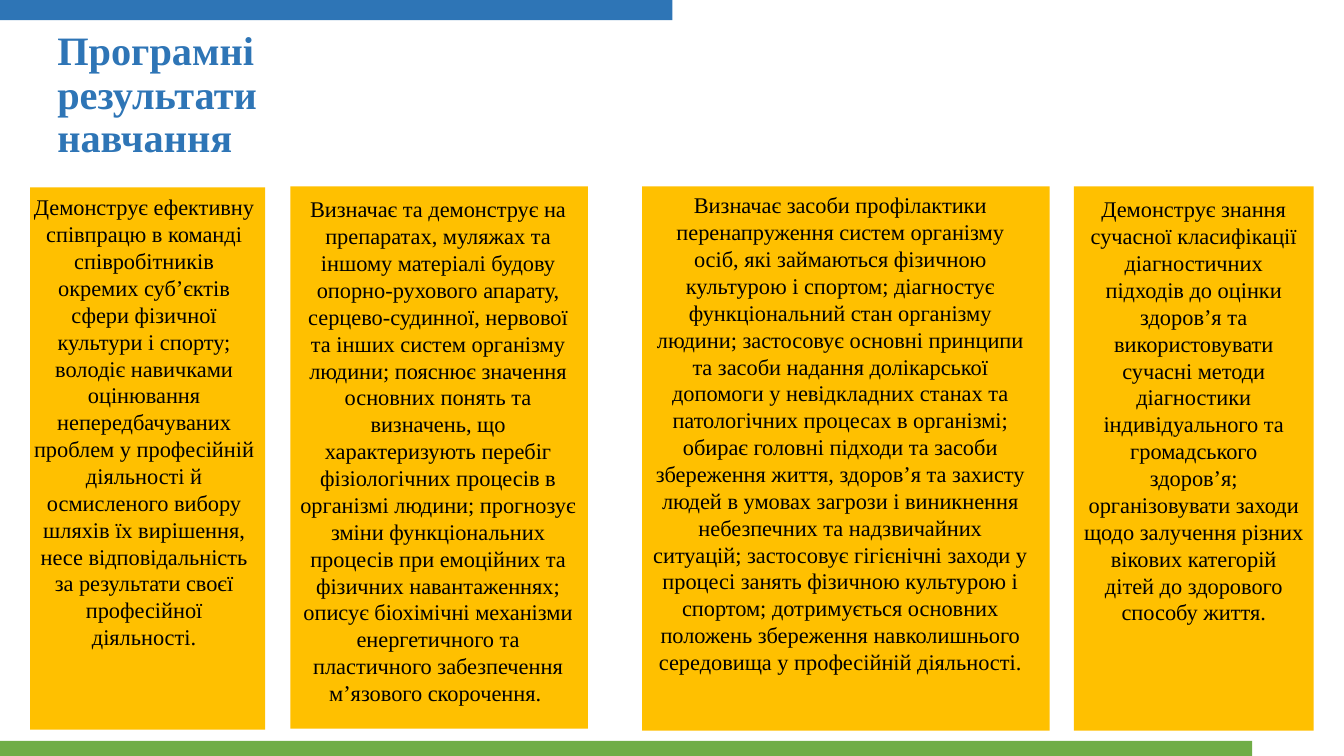
from dataclasses import dataclass

from pptx import Presentation
from pptx.dml.color import RGBColor
from pptx.enum.shapes import MSO_SHAPE
from pptx.enum.text import MSO_ANCHOR, MSO_AUTO_SIZE, PP_ALIGN
from pptx.slide import Slide
from pptx.text.text import TextFrame
from pptx.util import Inches, Pt

RECTANGLE = MSO_SHAPE.RECTANGLE
MIDDLE = MSO_ANCHOR.MIDDLE
GROW_TO_TEXT = MSO_AUTO_SIZE.SHAPE_TO_FIT_TEXT
CENTER = PP_ALIGN.CENTER
LEFT = PP_ALIGN.LEFT

FONT = "Times New Roman"
BLUE = "2E75B6"
GREEN = "70AD47"
AMBER = "FFC000"
BLACK = "000000"


@dataclass(frozen=True)
class Box:
    left: float
    top: float
    width: float
    height: float


@dataclass(frozen=True)
class Outcome:
    panel: Box
    text_area: Box
    text: str


TITLE = "Програмні \vрезультати \vнавчання"
TITLE_AREA = Box(0.47, 0.23, 6.2, 1.45)
BOTTOM_BAND = Box(-0.01, 7.35, 12.43, 0.18)
TOP_BAND = Box(-0.03, -0.03, 6.7, 0.23)

OUTCOMES = [
    Outcome(
        Box(0.3, 1.86, 2.33, 5.38),
        Box(0.23, 1.87, 2.4, 4.68),
        "Демонструє ефективну співпрацю в команді співробітників окремих "
        "суб’єктів сфери фізичної культури і спорту; володіє навичками "
        "оцінювання непередбачуваних проблем у професійній діяльності й "
        "осмисленого вибору шляхів їх вирішення, несе відповідальність за "
        "результати своєї професійної діяльності.",
    ),
    Outcome(
        Box(2.88, 1.85, 2.95, 5.38),
        Box(2.87, 1.89, 2.95, 5.22),
        "Визначає та демонструє на препаратах, муляжах та іншому матеріалі "
        "будову опорно-рухового апарату, серцево-судинної, нервової та інших "
        "систем організму людини; пояснює значення основних понять та "
        "визначень, що характеризують перебіг фізіологічних процесів в "
        "організмі людини; прогнозує зміни функціональних процесів при "
        "емоційних та фізичних навантаженнях; описує біохімічні механізми "
        "енергетичного та пластичного забезпечення м’язового скорочення. ",
    ),
    Outcome(
        Box(6.37, 1.85, 4.04, 5.4),
        Box(6.37, 1.85, 3.93, 4.95),
        "Визначає засоби профілактики перенапруження систем організму осіб, "
        "які займаються фізичною культурою і спортом; діагностує "
        "функціональний стан організму людини; застосовує основні принципи "
        "та засоби надання долікарської допомоги у невідкладних станах та "
        "патологічних процесах в організмі; обирає головні підходи та засоби "
        "збереження життя, здоров’я та захисту людей в умовах загрози і "
        "виникнення небезпечних та надзвичайних ситуацій; застосовує "
        "гігієнічні заходи у процесі занять фізичною культурою і спортом; "
        "дотримується основних положень збереження навколишнього середовища "
        "у професійній діяльності.",
    ),
    Outcome(
        Box(10.65, 1.85, 2.38, 5.4),
        Box(10.65, 1.89, 2.38, 4.68),
        "Демонструє знання сучасної класифікації діагностичних підходів до "
        "оцінки здоров’я та використовувати сучасні методи діагностики "
        "індивідуального та громадського здоров’я; організовувати заходи "
        "щодо залучення різних вікових категорій дітей до здорового способу "
        "життя.",
    ),
]


def rgb(hex_color: str) -> RGBColor:
    return RGBColor.from_string(hex_color)


def place(box: Box) -> tuple[Inches, Inches, Inches, Inches]:
    """Convert a box to the position arguments of the shape methods."""
    return Inches(box.left), Inches(box.top), Inches(box.width), Inches(box.height)


def add_panel(slide: Slide, box: Box, color: str) -> None:
    panel = slide.shapes.add_shape(RECTANGLE, *place(box))
    panel.shadow.inherit = False
    panel.fill.solid()
    panel.fill.fore_color.rgb = rgb(color)
    panel.line.fill.background()


def add_text(slide: Slide, box: Box, text: str, size: float, color: str,
             align: PP_ALIGN, bold: bool = False) -> TextFrame:
    frame = slide.shapes.add_textbox(*place(box)).text_frame
    frame.word_wrap = True
    paragraph = frame.paragraphs[0]
    paragraph.text = text
    paragraph.alignment = align
    paragraph.font.name = FONT
    paragraph.font.size = Pt(size)
    paragraph.font.bold = bold
    paragraph.font.color.rgb = rgb(color)
    return frame


def main() -> None:
    presentation = Presentation()
    presentation.slide_width = Inches(13.33)
    presentation.slide_height = Inches(7.5)
    slide = presentation.slides.add_slide(presentation.slide_layouts[6])

    add_panel(slide, BOTTOM_BAND, GREEN)
    add_panel(slide, TOP_BAND, BLUE)

    title = add_text(slide, TITLE_AREA, TITLE, 28.8, BLUE, LEFT, bold=True)
    title.vertical_anchor = MIDDLE
    title.paragraphs[0].line_spacing = 0.9

    for outcome in OUTCOMES:
        add_panel(slide, outcome.panel, AMBER)
        description = add_text(slide, outcome.text_area, outcome.text, 16, BLACK, CENTER)
        description.auto_size = GROW_TO_TEXT

    presentation.save("out.pptx")


if __name__ == "__main__":
    main()
